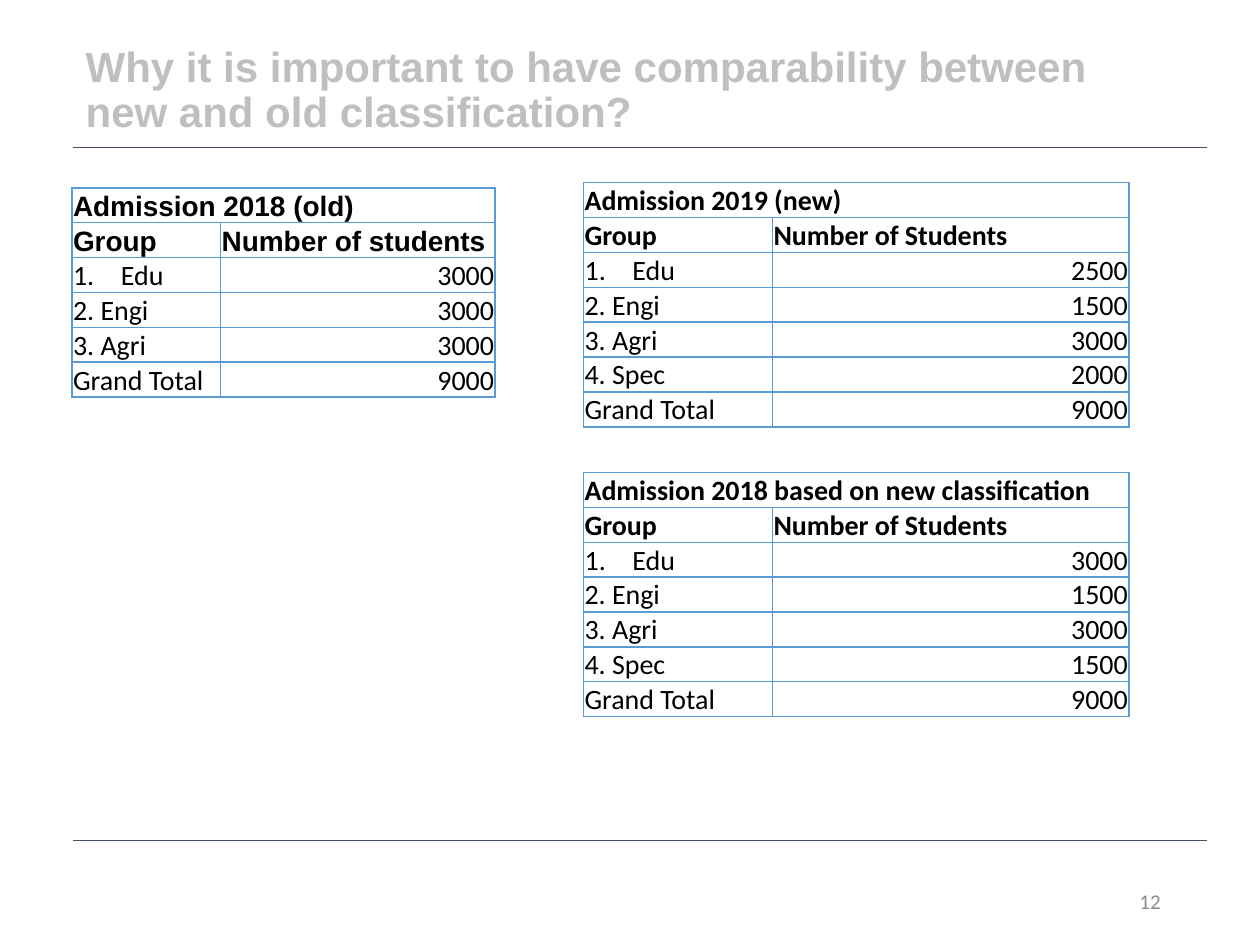
import pptx
import pptx.dml.color
import pptx.enum.shapes
import pptx.enum.text
import pptx.oxml
import pptx.oxml.ns
import pptx.util
from lxml import etree

Inches, Pt = pptx.util.Inches, pptx.util.Pt
RGBColor = pptx.dml.color.RGBColor
ALIGN = pptx.enum.text.PP_ALIGN
ANCHOR = pptx.enum.text.MSO_ANCHOR
qn = pptx.oxml.ns.qn

# Content
HEADING = "Why it is important to have comparability between new and old classification?"
PAGE = "12"
ADMISSIONS = [
    dict(title="Admission 2018 (old)", header=("Group", "Number of students"),
         rows=[("Edu", 3000), ("2. Engi", 3000), ("3. Agri", 3000), ("Grand Total", 9000)],
         at=(0.57, 1.49), widths=(1.18, 2.18), row_height=0.17, header_font="Arial"),
    dict(title="Admission 2019 (new)", header=("Group", "Number of Students"),
         rows=[("Edu", 2500), ("2. Engi", 1500), ("3. Agri", 3000), ("4. Spec", 2000),
               ("Grand Total", 9000)],
         at=(4.63, 1.45), widths=(1.5, 2.83), row_height=0.25, header_font="Calibri"),
    dict(title="Admission 2018 based on new classification", header=("Group", "Number of Students"),
         rows=[("Edu", 3000), ("2. Engi", 1500), ("3. Agri", 3000), ("4. Spec", 1500),
               ("Grand Total", 9000)],
         at=(4.63, 3.75), widths=(1.5, 2.83), row_height=0.25, header_font="Calibri"),
]
RULES_Y = (1.17, 6.67)

# Colours
BLACK = RGBColor(0x00, 0x00, 0x00)
TITLE_GREY = RGBColor(0xBF, 0xBF, 0xBF)
PAGE_GREY = RGBColor(0x8C, 0x8C, 0x8C)
RULE_SLATE = RGBColor(0x44, 0x54, 0x6A)
BORDER_BLUE = RGBColor(0x5B, 0x9B, 0xD5)


def write(frame, text, size=16, font="Calibri", color=BLACK, bold=False,
          align=ALIGN.LEFT, spacing=None, numbered=False):
    paragraph = frame.paragraphs[0]
    paragraph.alignment = align
    if spacing:
        paragraph.line_spacing = spacing
    if numbered:
        properties = paragraph._p.get_or_add_pPr()
        properties.set("marL", str(Inches(0.38)))
        properties.set("indent", str(-Inches(0.38)))
        etree.SubElement(properties, qn("a:buAutoNum"), type="arabicPeriod")
    run = paragraph.add_run()
    run.text = text
    run.font.size, run.font.name, run.font.bold = Pt(size), font, bold
    run.font.color.rgb = color


def style_cell(cell):
    cell.margin_left = cell.margin_right = cell.margin_top = Inches(0.01)
    cell.margin_bottom = 0
    cell.vertical_anchor = ANCHOR.BOTTOM
    properties = cell._tc.get_or_add_tcPr()
    for side in ("lnL", "lnR", "lnT", "lnB"):
        border = etree.SubElement(properties, qn("a:" + side), w=str(Pt(1)))
        fill = etree.SubElement(border, qn("a:solidFill"))
        etree.SubElement(fill, qn("a:srgbClr"), val=str(BORDER_BLUE))
    cell.fill.background()


def add_admission(slide, admission):
    rows, widths, height = admission["rows"], admission["widths"], admission["row_height"]
    row_count = len(rows) + 2
    left, top = admission["at"]
    table = slide.shapes.add_table(row_count, 2, Inches(left), Inches(top),
                                   Inches(sum(widths)), Inches(height * row_count)).table
    table.first_row = table.horz_banding = False
    for column, width in zip(table.columns, widths):
        column.width = Inches(width)
    for row in table.rows:
        row.height = Inches(height)
    for cell in table.iter_cells():
        style_cell(cell)

    # Title and header rows
    table.cell(0, 0).merge(table.cell(0, 1))
    heading = dict(font=admission["header_font"], bold=True)
    write(table.cell(0, 0).text_frame, admission["title"], **heading)
    for column, label in enumerate(admission["header"]):
        write(table.cell(1, column).text_frame, label, **heading)

    # Groups and their counts
    for index, (group, students) in enumerate(rows, start=2):
        write(table.cell(index, 0).text_frame, group, numbered=index == 2)
        write(table.cell(index, 1).text_frame, str(students), align=ALIGN.RIGHT)


def main():
    deck = pptx.Presentation()
    deck.slide_width, deck.slide_height = Inches(10), Inches(7.5)
    slide = deck.slides.add_slide(deck.slide_layouts[5])

    # Rules above and below the content
    for y in RULES_Y:
        rule = slide.shapes.add_connector(pptx.enum.shapes.MSO_CONNECTOR.STRAIGHT,
                                          Inches(0.58), Inches(y), Inches(9.58), Inches(y))
        rule.line.color.rgb, rule.line.width = RULE_SLATE, Pt(0.5)
        etree.SubElement(rule._element.spPr, qn("a:effectLst"))

    # Title
    title = slide.shapes.title
    title.left, title.top = Inches(0.58), Inches(0.35)
    title.width, title.height = Inches(8.73), Inches(0.75)
    title.text_frame.vertical_anchor = ANCHOR.MIDDLE
    title.text_frame.auto_size = pptx.enum.text.MSO_AUTO_SIZE.NONE
    write(title.text_frame, HEADING, size=24, font="Arial", color=TITLE_GREY,
          bold=True, spacing=0.9)

    # Page number
    page = slide.shapes.add_textbox(Inches(7.06), Inches(6.95), Inches(2.25), Inches(0.4)).text_frame
    page.word_wrap = True
    page.vertical_anchor = ANCHOR.MIDDLE
    write(page, PAGE, size=12, color=PAGE_GREY, align=ALIGN.RIGHT)

    # Tables
    for admission in ADMISSIONS:
        add_admission(slide, admission)

    deck.save("out.pptx")


if __name__ == "__main__":
    main()
